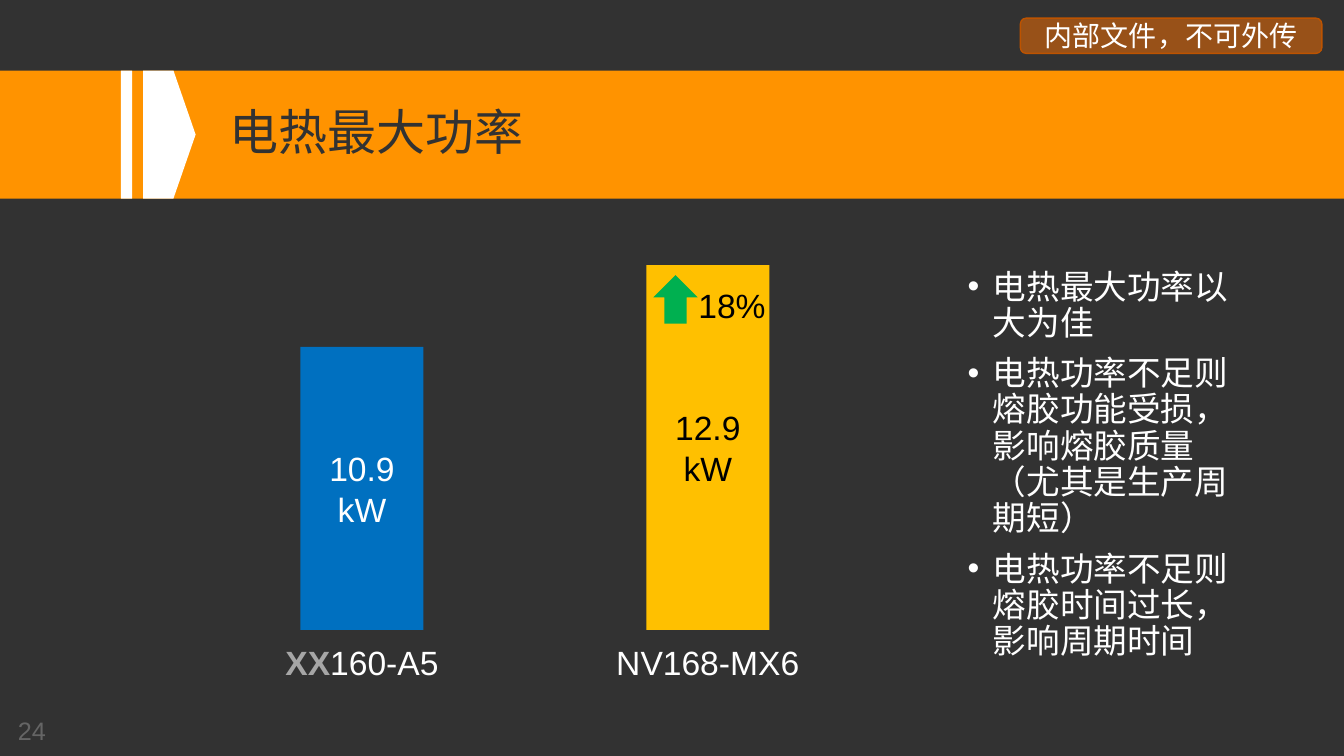
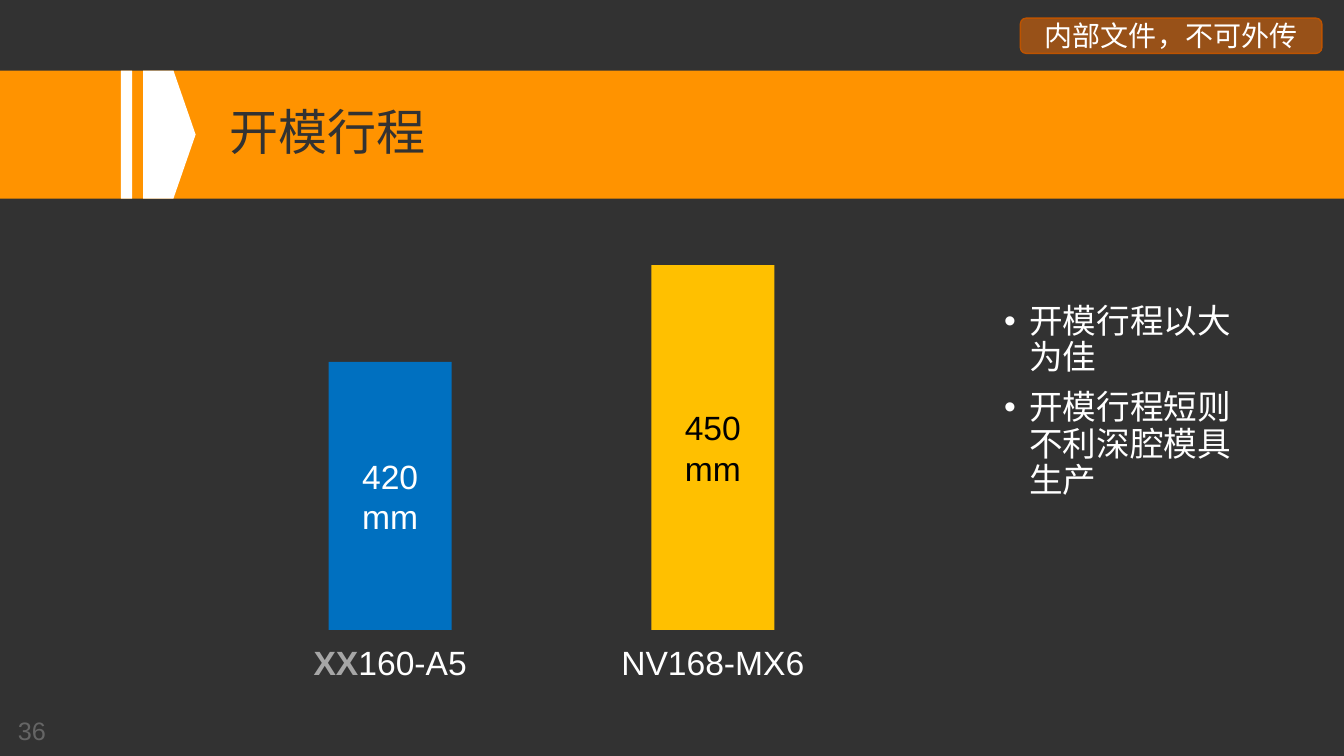
from pptx import Presentation
from pptx.dml.color import RGBColor
from pptx.enum.shapes import MSO_SHAPE as SHAPE
from pptx.enum.text import MSO_ANCHOR as ANCHOR, PP_ALIGN as ALIGN
from pptx.oxml.xmlchemy import OxmlElement
from pptx.util import Inches, Pt

W, H = 13.33, 7.5
FONT = "Arial"
COLORS = {
    "bg": "323232", "band": "FF9300", "white": "FFFFFF", "black": "000000",
    "badge": "FF7000", "badge_line": "BD5300", "blue": "0070C0",
    "gold": "FFC000", "green": "00B050", "grey": "A6A6A6", "number": "656565",
}
BAND_TOP, BAND_H = 0.7, 1.27
BAR_W, BASELINE, LABEL_H = 1.22, 6.25, 0.5

SLIDES = [
    {
        "title": "电热最大功率", "number": "24", "unit": "kW",
        "bars": [
            {"x": 2.98, "h": 2.81, "value": "10.9"},
            {"x": 6.41, "h": 3.62, "value": "12.9", "gain": "18%"},
        ],
        "notes_box": (9.5, 2.63, 3, 4.65),
        "notes": [
            "电热最大功率以大为佳",
            "电热功率不足则熔胶功能受损，影响熔胶质量（尤其是生产周期短）",
            "电热功率不足则熔胶时间过长，影响周期时间",
        ],
    },
    {
        "title": "开模行程", "number": "36", "unit": "mm",
        "bars": [
            {"x": 3.26, "h": 2.66, "value": "420"},
            {"x": 6.46, "h": 3.62, "value": "450"},
        ],
        "notes_box": (9.86, 2.97, 2.64, 4.31),
        "notes": ["开模行程以大为佳", "开模行程短则不利深腔模具生产"],
    },
]
SERIES = [
    {"fill": "blue", "text": "white", "label_w": 2.95,
     "label": [("XX", "grey", True), ("160-A5", "white", False)]},
    {"fill": "gold", "text": "black", "label_w": 2.64,
     "label": [("NV168-MX6", "white", False)]},
]


def rgb(name):
    """Return a palette colour."""
    return RGBColor.from_string(COLORS[name])


def paint(sp, fill, line=None):
    """Give a shape a flat fill, an optional 1 pt line and no shadow."""
    sp.shadow.inherit = False
    sp.fill.solid()
    sp.fill.fore_color.rgb = rgb(fill)
    if line:
        sp.line.color.rgb = rgb(line)
        sp.line.width = Pt(1)
    else:
        sp.line.fill.background()
    return sp


def add_block(s, kind, box, fill, line=None):
    """Add a painted preset shape."""
    return paint(s.shapes.add_shape(kind, *map(Inches, box)), fill, line)


def add_outline(s, points, fill):
    """Add a painted closed polygon through points given in inches."""
    start, *rest = [(Inches(x), Inches(y)) for x, y in points]
    outline = s.shapes.build_freeform(*start)
    outline.add_line_segments(rest, close=True)
    return paint(outline.convert_to_shape(), fill)


def add_text_box(s, box):
    """Add an empty text box."""
    return s.shapes.add_textbox(*map(Inches, box))


def write(sp, paragraphs, size, align=ALIGN.LEFT, anchor=ANCHOR.TOP,
          inset=None, wrap=True, spacing=None, before=None):
    """Write paragraphs, each a list of (text, colour, bold) runs."""
    tf = sp.text_frame
    tf.word_wrap = wrap
    tf.vertical_anchor = anchor
    if inset is not None:
        tf.margin_left = tf.margin_right = Inches(inset)
        tf.margin_top = tf.margin_bottom = Inches(inset)
    for i, runs in enumerate(paragraphs):
        p = tf.add_paragraph() if i else tf.paragraphs[0]
        p.alignment = align
        if spacing:
            p.line_spacing = spacing
        if before:
            p.space_before = Pt(before)
        for text, color, bold in runs:
            r = p.add_run()
            r.text = text
            r.font.name, r.font.size, r.font.bold = FONT, Pt(size), bold
            r.font.color.rgb = rgb(color)
    return tf


def add_bullet(p, indent):
    """Turn a paragraph into a hanging bullet."""
    ppr = p._p.get_or_add_pPr()
    ppr.set("marL", str(Inches(indent)))
    ppr.set("indent", str(-Inches(indent)))
    for tag, key, value in (("a:buFont", "typeface", FONT),
                            ("a:buChar", "char", "•")):
        el = OxmlElement(tag)
        el.set(key, value)
        ppr.append(el)


def draw_band(s, title, x, y, w, h):
    """Draw the title band with its stripe, pointer and title."""
    add_block(s, SHAPE.RECTANGLE, (x, y, w, h), "band")
    add_block(s, SHAPE.RECTANGLE, (x + 1.2, y, 0.11, h), "white")
    left, shoulder, tip = x + 1.42, x + 1.72, x + 1.94
    add_outline(s, [(left, y), (shoulder, y), (tip, y + h / 2),
                    (shoulder, y + h), (left, y + h)], "white")
    write(add_text_box(s, (x + 2.18, y, 10.73, h)), [[(title, "bg", False)]],
          35, anchor=ANCHOR.MIDDLE, spacing=0.9)


def draw_badge(s, x, y, w, h):
    """Draw the half-transparent confidentiality badge."""
    sp = add_block(s, SHAPE.ROUNDED_RECTANGLE, (x, y, w, h),
                   "badge", "badge_line")
    alpha = OxmlElement("a:alpha")
    alpha.set("val", "50000")
    sp.fill._xPr.solidFill[0].append(alpha)
    write(sp, [[("内部文件，不可外传", "white", False)]], 20,
          ALIGN.CENTER, ANCHOR.MIDDLE)


def draw_gain(s, text, x, y):
    """Draw the rise arrow and its percentage from a bar's top left."""
    add_block(s, SHAPE.UP_ARROW, (x + 0.07, y + 0.1, 0.44, 0.48), "green")
    write(add_text_box(s, (x + 0.41, y + 0.15, 0.88, LABEL_H)),
          [[(text, "black", False)]], 24, ALIGN.CENTER, wrap=False)


def draw_bar(s, bar, style, unit):
    """Draw one bar standing on the baseline, with value and model name."""
    x, h = bar["x"], bar["h"]
    top = BASELINE - h
    sp = add_block(s, SHAPE.RECTANGLE, (x, top, BAR_W, h), style["fill"])
    write(sp, [[(text, style["text"], False)] for text in (bar["value"], unit)],
          24, ALIGN.CENTER, ANCHOR.MIDDLE, inset=0.05)
    label_w = style["label_w"]
    label_x = x + (BAR_W - label_w) / 2
    label = add_text_box(s, (label_x, BASELINE + 0.07, label_w, LABEL_H))
    write(label, [style["label"]], 24, ALIGN.CENTER, inset=0.05, before=4)
    if "gain" in bar:
        draw_gain(s, bar["gain"], x, top)


def draw_notes(s, notes, box):
    """Write the bulleted remarks."""
    tf = write(add_text_box(s, box), [[(note, "white", False)] for note in notes],
               24, spacing=0.9, before=10)
    for p in tf.paragraphs:
        add_bullet(p, 0.25)


def build_slide(prs, data):
    """Build one comparison slide."""
    s = prs.slides.add_slide(prs.slide_layouts[6])
    s.background.fill.solid()
    s.background.fill.fore_color.rgb = rgb("bg")
    draw_band(s, data["title"], 0, BAND_TOP, W, BAND_H)
    draw_badge(s, 10.12, 0.18, 2.99, 0.35)
    for bar, style in zip(data["bars"], SERIES):
        draw_bar(s, bar, style, data["unit"])
    draw_notes(s, data["notes"], data["notes_box"])
    write(add_text_box(s, (0.08, 7.05, 0.66, 0.36)),
          [[(data["number"], "number", False)]], 18)


def main():
    """Build and save the presentation."""
    prs = Presentation()
    prs.slide_width, prs.slide_height = Inches(W), Inches(H)
    for data in SLIDES:
        build_slide(prs, data)
    prs.save("out.pptx")


if __name__ == "__main__":
    main()
